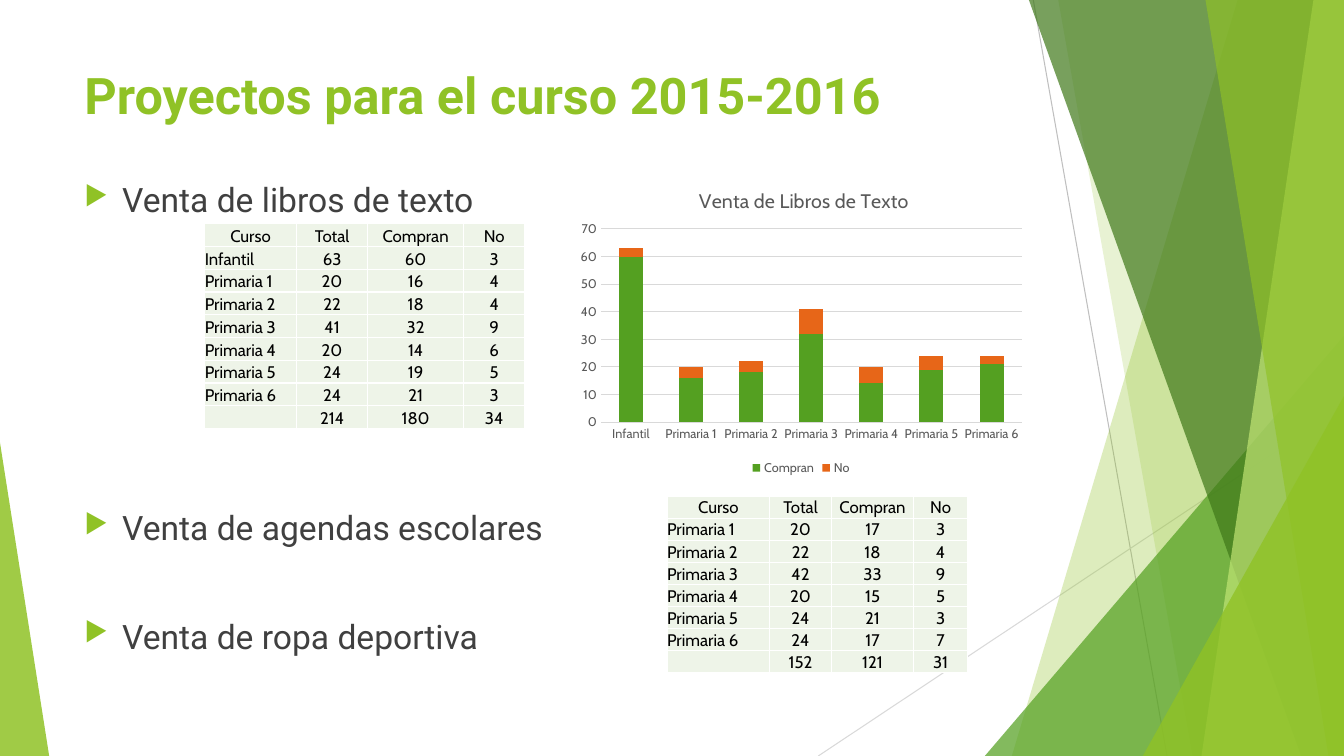
from dataclasses import dataclass
from lxml import etree
from pptx import Presentation
from pptx.chart.data import CategoryChartData
from pptx.dml.color import RGBColor
from pptx.enum.chart import XL_CHART_TYPE, XL_LEGEND_POSITION, XL_TICK_MARK
from pptx.enum.shapes import MSO_CONNECTOR, MSO_SHAPE
from pptx.enum.text import MSO_ANCHOR, PP_ALIGN
from pptx.oxml.ns import qn
from pptx.util import Cm, Pt

STACKED = XL_CHART_TYPE.COLUMN_STACKED
BELOW = XL_LEGEND_POSITION.BOTTOM
NO_TICK = XL_TICK_MARK.NONE
STRAIGHT = MSO_CONNECTOR.STRAIGHT
WEDGE = MSO_SHAPE.ISOSCELES_TRIANGLE
TOP, BASE = MSO_ANCHOR.TOP, MSO_ANCHOR.BOTTOM
LEFT, MID = PP_ALIGN.LEFT, PP_ALIGN.CENTER
WIDE, HIGH = 33.87, 19.05


@dataclass(frozen=True)
class Theme:
    lime: str = "90C226"
    green: str = "54A021"
    dark: str = "3F7819"
    pale: str = "C0E474"
    orange: str = "E76618"
    ink: str = "404040"
    black: str = "000000"
    gray: str = "595959"
    rule: str = "BFBFBF"
    grid: str = "D9D9D9"
    cell: str = "EEF4E8"
    white: str = "FFFFFF"
    head: str = "Roboto"
    body: str = "Cabin"
    title: int = 36
    item: int = 24
    chart: int = 14
    table: int = 12
    label: int = 9


def put(thing, **values):
    for name, value in values.items():
        setattr(thing, name, value)


def style(font, face, size, color, bold=False):
    put(font, name=face, size=Pt(size), bold=bold)
    font.color.rgb = RGBColor.from_string(color)


def node(host, tag, **values):
    return etree.SubElement(host, qn(tag), values)


def place(host, spot, **values):
    layout = host.find(qn("c:layout"))
    if layout is None:
        layout = etree.Element(qn("c:layout"))
        host.insert(spot, layout)
    manual = node(layout, "c:manualLayout")
    for name, value in values.items():
        node(manual, f"c:{name}", val=str(value))


class Deck:
    def __init__(self, theme):
        self.theme = theme
        self.file = Presentation()
        put(self.file, slide_width=Cm(WIDE), slide_height=Cm(HIGH))
        self.slide = self.file.slides.add_slide(self.file.slide_layouts[6])
        self.shapes = self.slide.shapes

    def line(self, x1, y1, x2, y2, color):
        line = self.shapes.add_connector(STRAIGHT, Cm(x1), Cm(y1), Cm(x2), Cm(y2))
        line.line.width = Pt(0.75)
        line.line.color.rgb = RGBColor.from_string(color)
        node(line._element.spPr, "a:effectLst")

    def tint(self, shape, color, alpha):
        shape.shadow.inherit = False
        shape.line.fill.background()
        shape.fill.solid()
        shape.fill.fore_color.rgb = RGBColor.from_string(color)
        fill = shape._element.spPr.find(qn("a:solidFill"))
        node(fill[0], "a:alpha", val=str(alpha * 1000))

    def band(self, top, foot, color, alpha):
        form = self.shapes.build_freeform(Cm(top), 0)
        form.add_line_segments(
            [(Cm(WIDE), 0), (Cm(WIDE), Cm(HIGH)), (Cm(foot), Cm(HIGH))])
        self.tint(form.convert_to_shape(), color, alpha)

    def wedge(self, x, y, width, peak, color, alpha):
        shape = self.shapes.add_shape(WEDGE, Cm(x), Cm(y), Cm(width), Cm(HIGH - y))
        shape.adjustments[0] = peak
        self.tint(shape, color, alpha)

    def text(self, box, items, size, color, bold=False, mark=False):
        frame = self.shapes.add_textbox(*map(Cm, box)).text_frame
        put(frame, word_wrap=True, vertical_anchor=TOP)
        for i, (words, gap) in enumerate(items):
            para = frame.add_paragraph() if i else frame.paragraphs[0]
            para.space_before = Pt(gap)
            if mark:
                props = para._p.get_or_add_pPr()
                props.set("marL", str(Cm(0.95)))
                props.set("indent", str(-Cm(0.95)))
                tone = node(props, "a:buClr")
                node(tone, "a:srgbClr", val=self.theme.lime)
                node(props, "a:buSzPct", val="80000")
                node(props, "a:buChar", char="▶")
            run = para.add_run()
            run.text = words
            style(run.font, self.theme.head, size, color, bold)

    def table(self, x, y, widths, high, rows):
        look = self.theme
        grid = self.shapes.add_table(
            len(rows), len(widths), Cm(x), Cm(y), Cm(sum(widths)), Cm(high)).table
        put(grid, first_row=False, horz_banding=False)
        for col, width in zip(grid.columns, widths):
            col.width = Cm(width)
        for r, row in enumerate(rows):
            grid.rows[r].height = Cm(high / len(rows))
            for c, value in enumerate(row):
                self.cell(grid.cell(r, c), str(value), MID if c or not r else LEFT, look)

    def cell(self, cell, words, align, look):
        put(cell, margin_left=0, margin_right=0, margin_top=0, margin_bottom=0,
            vertical_anchor=BASE)
        cell.fill.solid()
        cell.fill.fore_color.rgb = RGBColor.from_string(look.cell)
        props = cell._tc.get_or_add_tcPr()
        for i, side in enumerate("LRTB"):
            edge = etree.Element(qn(f"a:ln{side}"), {"w": str(Pt(1))})
            node(node(edge, "a:solidFill"), "a:srgbClr", val=look.white)
            props.insert(i, edge)
        para = cell.text_frame.paragraphs[0]
        para.alignment = align
        if words:
            run = para.add_run()
            run.text = words
            style(run.font, look.body, look.table, look.black)
        else:
            node(para._p, "a:endParaRPr", sz=str(look.table * 100))

    def chart(self, box, title, names, series):
        look = self.theme
        data = CategoryChartData()
        data.categories = names
        for name, values, _ in series:
            data.add_series(name, values)
        chart = self.shapes.add_chart(STACKED, *map(Cm, box), data).chart
        put(chart, has_title=True, has_legend=True)
        style(chart.font, look.body, look.label, look.gray)
        frame = chart.chart_title.text_frame
        frame.text = title
        style(frame.paragraphs[0].runs[0].font, look.body, look.chart, look.gray)
        place(chart.chart_title._element, 1, xMode="edge", yMode="edge", x=0.27, y=0.05)
        area = chart._chartSpace.chart.plotArea
        place(area, 0, layoutTarget="inner", xMode="edge", yMode="edge",
              x=0.064, y=0.195, w=0.916, h=0.62)
        put(chart.legend, position=BELOW, include_in_layout=False)
        style(chart.legend.font, look.body, look.label, look.gray)
        plot = chart.plots[0]
        put(plot, gap_width=150, overlap=100, vary_by_categories=False)
        for bar, (_, _, color) in zip(plot.series, series):
            bar.format.fill.solid()
            bar.format.fill.fore_color.rgb = RGBColor.from_string(color)
        for axis in (chart.category_axis, chart.value_axis):
            put(axis, major_tick_mark=NO_TICK, minor_tick_mark=NO_TICK)
            axis.format.line.fill.background()
            style(axis.tick_labels.font, look.body, look.label, look.gray)
        put(chart.value_axis, minimum_scale=0, maximum_scale=70, major_unit=10,
            has_major_gridlines=True)
        rule = chart.value_axis.major_gridlines.format.line
        rule.width = Pt(0.75)
        rule.color.rgb = RGBColor.from_string(look.grid)


def tally(rows):
    full = [(name, buy + skip, buy, skip) for name, buy, skip in rows]
    sums = [sum(col) for col in list(zip(*full))[1:]]
    return [("Curso", "Total", "Compran", "No"), *full, ("", *sums)]


def main():
    look = Theme()
    deck = Deck(look)
    deck.line(26.04, 0, 29.41, HIGH, look.rule)
    deck.line(WIDE, 10.24, 20.62, HIGH, look.grid)
    deck.band(31.19, 25.5, look.lime, 30)
    deck.band(26.67, 30.05, look.lime, 20)
    deck.wedge(24.82, 8.46, 9.05, 1, look.green, 72)
    deck.band(25.93, 32.79, look.dark, 70)
    deck.band(33.1, 30.28, look.pale, 70)
    deck.band(30.38, 33.48, look.lime, 65)
    deck.wedge(28.8, 9.98, 5.07, 1, look.lime, 80)
    deck.wedge(0, 11.15, 1.24, 0, look.lime, 85)

    deck.text((1.88, 1.5, 24.46, 2.44), [("Proyectos para el curso 2015-2016", 0)],
              look.title, look.lime, bold=True)
    deck.text((1.88, 4.39, 23.88, 12.42),
              [("Venta de libros de texto", 0), ("Venta de agendas escolares", 205),
               ("Venta de ropa deportiva", 49)],
              look.item, look.ink, mark=True)

    names = ["Infantil"] + [f"Primaria {n}" for n in range(1, 7)]
    buy, skip = (60, 16, 18, 32, 14, 19, 21), (3, 4, 4, 9, 6, 5, 3)
    deck.chart((14.4, 4.24, 11.58, 7.85), "Venta de Libros de Texto", names,
               [("Compran", buy, look.green), ("No", skip, look.orange)])
    deck.table(5.16, 5.64, (2.31, 1.8, 2.41, 1.55), 5.16, tally(zip(names, buy, skip)))
    diary = zip(names[1:], (17, 18, 33, 15, 21, 17), (3, 4, 9, 5, 3, 7))
    deck.table(16.81, 12.5, (2.59, 1.55, 2.08, 1.35), 4.45, tally(diary))
    deck.file.save("out.pptx")


if __name__ == "__main__":
    main()
